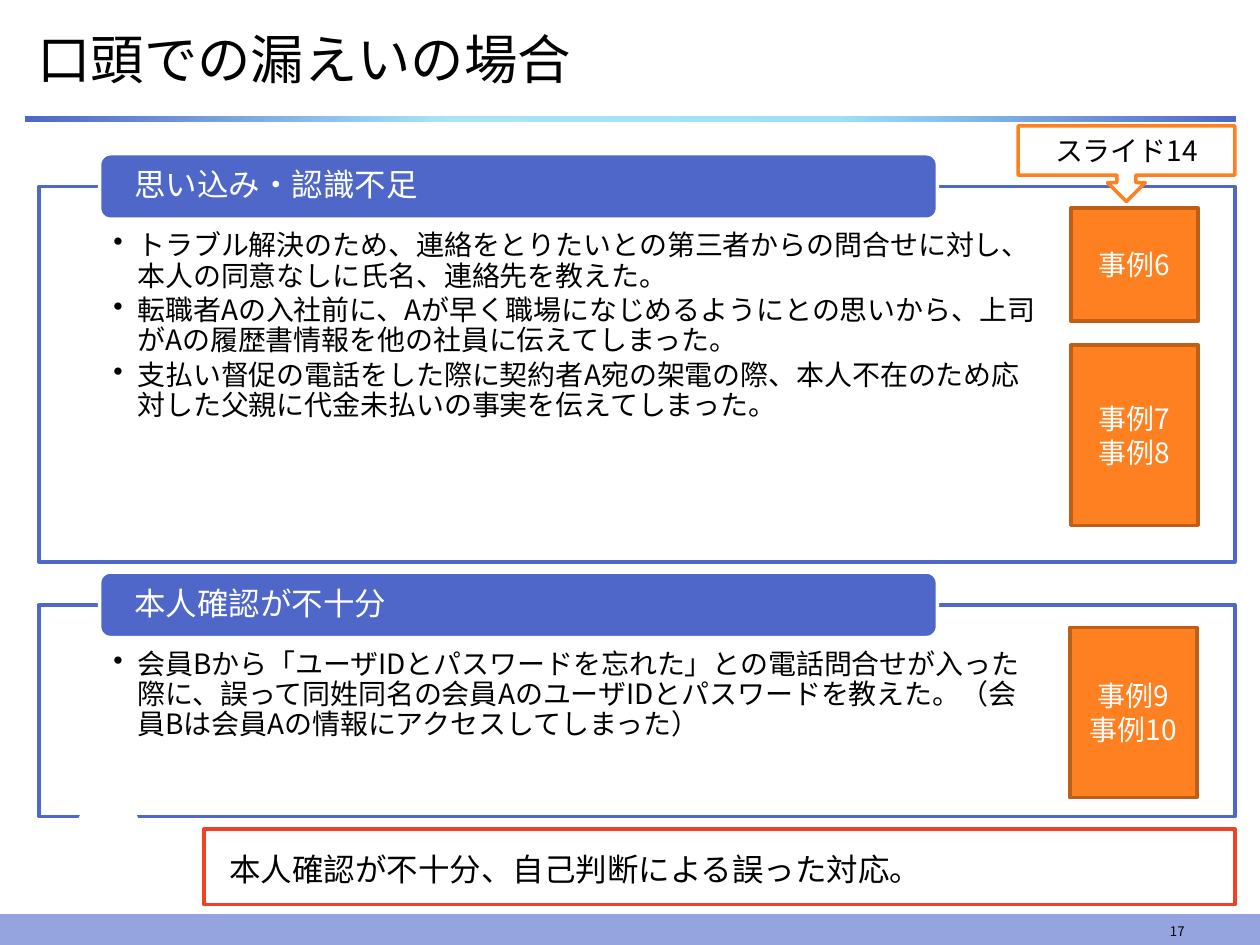
from lxml.etree import SubElement
from pptx import Presentation
from pptx.dml.color import RGBColor
from pptx.enum.shapes import MSO_SHAPE as Shape
from pptx.enum.text import MSO_ANCHOR as Anchor, PP_ALIGN as Align
from pptx.oxml.ns import qn
from pptx.util import Inches, Pt

FONT = "Noto Sans CJK JP"
BLACK = RGBColor(0x00, 0x00, 0x00)
WHITE = RGBColor(0xFF, 0xFF, 0xFF)
BLUE = RGBColor(0x4E, 0x67, 0xC8)
PALE_BLUE = RGBColor(0x95, 0xA4, 0xDE)
SKY = RGBColor(0xA9, 0xE3, 0xF8)
LIGHT_SKY = RGBColor(0x9E, 0xE0, 0xF7)
ORANGE = RGBColor(0xFF, 0x80, 0x21)
BROWN = RGBColor(0xBD, 0x5F, 0x18)
RED = RGBColor(0xF1, 0x41, 0x24)

RULE_STOPS = [(0, BLUE), (35, SKY), (67, LIGHT_SKY), (100, BLUE)]
CASE_INSETS = (0.08, 0.01, 0.08, 0.01)
PANELS = [
    (1.48, 2.98, "思い込み・認識不足", [
        "トラブル解決のため、連絡をとりたいとの第三者からの問合せに対し、本人の同意なしに氏名、連絡先を教えた。",
        "転職者Aの入社前に、Aが早く職場になじめるようにとの思いから、上司がAの履歴書情報を他の社員に伝えてしまった。",
        "支払い督促の電話をした際に契約者A宛の架電の際、本人不在のため応対した父親に代金未払いの事実を伝えてしまった。",
    ]),
    (4.8, 1.68, "本人確認が不十分", [
        "会員Bから「ユーザIDとパスワードを忘れた」との電話問合せが入った際に、誤って同姓同名の会員AのユーザIDとパスワードを教えた。（会員Bは会員Aの情報にアクセスしてしまった）",
    ]),
]
CASES = [
    (8.5, 1.65, 0.9, ["事例6"]),
    (8.5, 2.74, 1.43, ["事例7", "事例8"]),
    (8.49, 4.98, 1.35, ["事例9", "事例10"]),
]


def add_box(page, kind, left, top, width, height, fill, line=None, weight=2):
    """Add a flat preset shape with a solid fill and an optional outline."""
    box = page.shapes.add_shape(
        kind, Inches(left), Inches(top), Inches(width), Inches(height))
    box.shadow.inherit = False
    box.fill.solid()
    box.fill.fore_color.rgb = fill
    if line is None:
        box.line.fill.background()
    else:
        box.line.color.rgb = line
        box.line.width = Pt(weight)
    return box


def write_text(box, lines, size, color, align=Align.LEFT, anchor=Anchor.MIDDLE,
               insets=(0.1, 0.05, 0.1, 0.05)):
    """Write one paragraph per line and return the paragraphs."""
    frame = box.text_frame
    frame.word_wrap = True
    frame.vertical_anchor = anchor
    (frame.margin_left, frame.margin_top,
     frame.margin_right, frame.margin_bottom) = map(Inches, insets)
    for index, line in enumerate(lines):
        para = frame.add_paragraph() if index else frame.paragraphs[0]
        para.alignment = align
        span = para.add_run()
        span.text = line
        span.font.size = Pt(size)
        span.font.name = FONT
        span.font.color.rgb = color
        SubElement(span.font._element, qn("a:ea"), typeface=FONT)
    return frame.paragraphs


def add_label(page, left, top, width, height, text, size, **layout):
    """Add a text box holding a single black line."""
    box = page.shapes.add_textbox(
        Inches(left), Inches(top), Inches(width), Inches(height))
    write_text(box, [text], size, BLACK, **layout)


def add_bullet(para):
    """Give a paragraph a hanging bullet and tight spacing."""
    para.line_spacing = 0.9
    para.space_after = Pt(2.4)
    properties = para._p.get_or_add_pPr()
    properties.set("marL", str(Inches(0.19)))
    properties.set("indent", str(-Inches(0.19)))
    SubElement(properties, qn("a:buChar"), char="•")


def add_title_rule(page):
    """Add the thin gradient bar below the title."""
    rule = add_box(page, Shape.RECTANGLE, 0.2, 0.92, 9.61, 0.05, BLUE)
    rule.fill.gradient()
    rule.fill.gradient_angle = 0
    stops = rule._element.spPr.find(qn("a:gradFill")).find(qn("a:gsLst"))
    for stop in list(stops):
        stops.remove(stop)
    for percent, color in RULE_STOPS:
        stop = SubElement(stops, qn("a:gs"), pos=str(percent * 1000))
        SubElement(stop, qn("a:srgbClr"), val=str(color))


def add_panel(page, top, height, heading, points):
    """Add an outlined panel of bullets with its heading banner."""
    panel = add_box(page, Shape.RECTANGLE, 0.31, top, 9.49, height, WHITE, BLUE)
    for para in write_text(panel, points, 16, BLACK, anchor=Anchor.TOP,
                           insets=(0.59, 0.36, 1.57, 0.12)):
        add_bullet(para)
    banner = add_box(page, Shape.ROUNDED_RECTANGLE,
                     0.79, top - 0.26, 6.65, 0.52, BLUE, WHITE)
    write_text(banner, [heading], 18, WHITE, insets=(0.25, 0, 0.25, 0))[0].line_spacing = 0.9


def add_case(page, left, top, height, names):
    """Add an orange tag naming the related cases."""
    tag = add_box(page, Shape.RECTANGLE, left, top, 1.01, height, ORANGE, BROWN)
    write_text(tag, names, 16, WHITE, Align.CENTER, insets=CASE_INSETS)


def main():
    """Build the slide and save the deck."""
    deck = Presentation()
    deck.slide_width, deck.slide_height = Inches(10), Inches(7.5)
    page = deck.slides.add_slide(deck.slide_layouts[6])

    add_box(page, Shape.RECTANGLE, 0, 7.26, 10, 0.24, PALE_BLUE, PALE_BLUE, 0.75)
    add_title_rule(page)
    add_label(page, 0.2, 0.14, 9.61, 0.65, "口頭での漏えいの場合", 30.5)
    for panel in PANELS:
        add_panel(page, *panel)
    add_label(page, 7.17, 7.26, 2.33, 0.24, "17", 7.5,
              align=Align.RIGHT, anchor=Anchor.BOTTOM)

    summary = add_box(page, Shape.RECTANGLE, 1.62, 6.58, 8.18, 0.6, WHITE, RED)
    write_text(summary, ["本人確認が不十分、自己判断による誤った対応。"], 18, BLACK,
               insets=(0.2, 0.24, 0.2, 0.2))
    callout = add_box(page, Shape.DOWN_ARROW_CALLOUT, 8.08, 1, 1.72, 0.6, WHITE, ORANGE)
    write_text(callout, ["スライド14"], 16, BLACK, Align.CENTER, insets=CASE_INSETS)
    for case in CASES:
        add_case(page, *case)
    add_box(page, Shape.OVAL, 0.6, 6.34, 0.52, 0.52, WHITE)

    deck.save("out.pptx")


if __name__ == "__main__":
    main()
